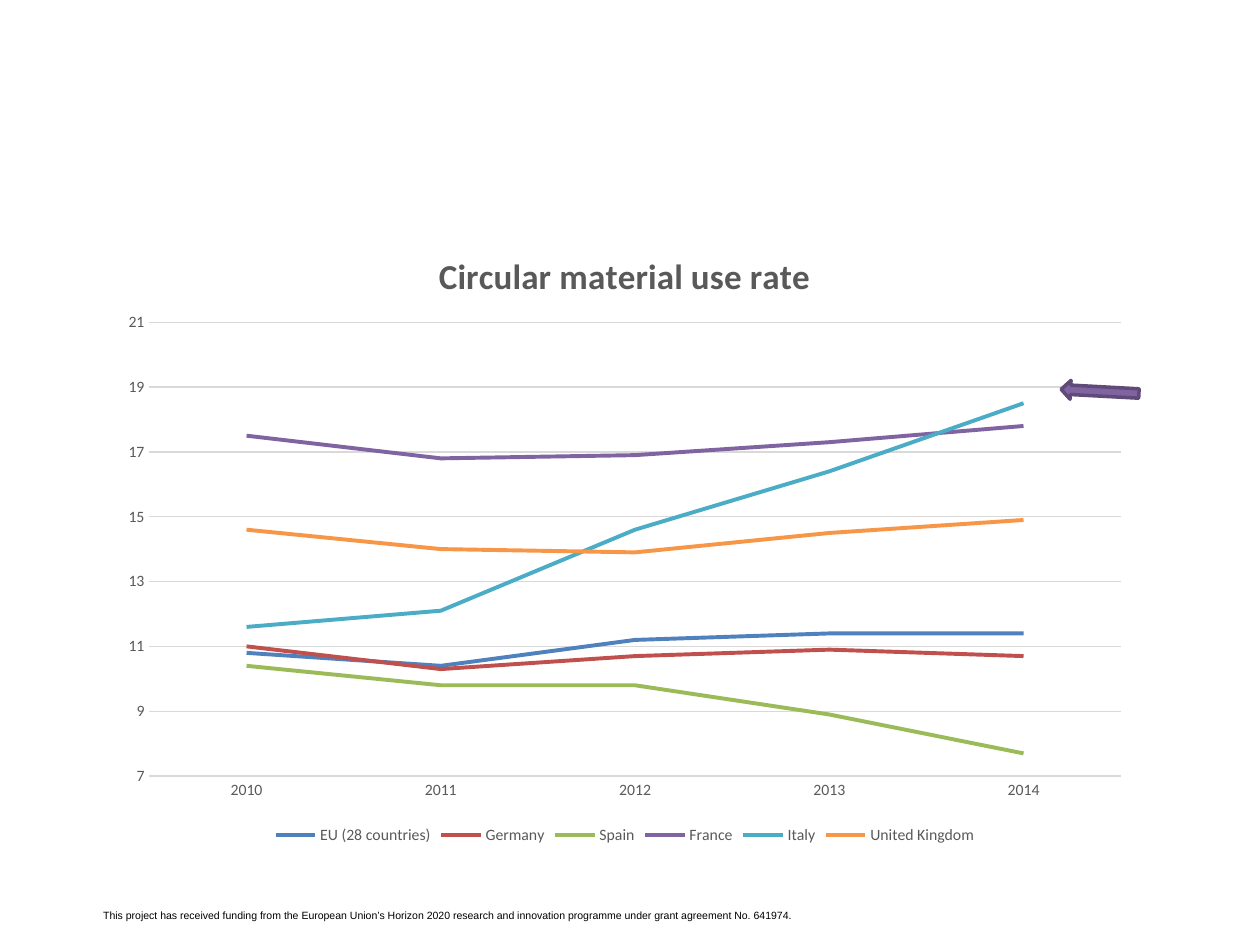
"""Build a slide with a line chart of circular material use rates."""
from pptx import Presentation
from pptx.chart.data import CategoryChartData
from pptx.dml.color import RGBColor
from pptx.enum.chart import XL_CHART_TYPE as ChartType
from pptx.enum.chart import XL_LEGEND_POSITION as LegendPosition
from pptx.enum.chart import XL_TICK_MARK as TickMark
from pptx.enum.shapes import MSO_SHAPE as Shape
from pptx.oxml import parse_xml
from pptx.oxml.ns import nsdecls
from pptx.util import Cm, Pt

COLORS = {
    "blue": "4F81BD", "red": "C0504D", "green": "9BBB59",
    "purple": "8064A2", "teal": "4BACC6", "orange": "F79646",
    "dark purple": "5F4A78", "gray": "595959", "grid": "D9D9D9", "black": "000000",
}
TITLE = "Circular material use rate"
FUNDING = (
    "This project has received funding from the European Union’s Horizon 2020 "
    "research and innovation programme under grant agreement No. 641974."
)
YEARS = ["2010", "2011", "2012", "2013", "2014"]
RATES = [
    ("EU (28 countries)", "blue", [10.8, 10.4, 11.2, 11.4, 11.4]),
    ("Germany", "red", [11, 10.3, 10.7, 10.9, 10.7]),
    ("Spain", "green", [10.4, 9.8, 9.8, 8.9, 7.7]),
    ("France", "purple", [17.5, 16.8, 16.9, 17.3, 17.8]),
    ("Italy", "teal", [11.6, 12.1, 14.6, 16.4, 18.5]),
    ("United Kingdom", "orange", [14.6, 14, 13.9, 14.5, 14.9]),
]
PLOT_AREA = {"x": 0.04, "y": 0.155, "w": 0.94, "h": 0.728}


def color(name):
    return RGBColor.from_string(COLORS[name])


def style_font(font, size, name="gray", family="Calibri", bold=False):
    font.name, font.size, font.bold = family, Pt(size), bold
    font.color.rgb = color(name)


def style_line(line, name, width):
    line.color.rgb = color(name)
    line.width = Pt(width)


def place_plot_area(chart):
    sizes = "".join(f'<c:{key} val="{value}"/>' for key, value in PLOT_AREA.items())
    layout = parse_xml(
        f'<c:layout {nsdecls("c")}><c:manualLayout><c:layoutTarget val="inner"/>'
        f'<c:xMode val="edge"/><c:yMode val="edge"/>{sizes}'
        "</c:manualLayout></c:layout>"
    )
    plot_area = chart._chartSpace.chart.plotArea
    for old_layout in plot_area.findall(layout.tag):
        plot_area.remove(old_layout)
    plot_area.insert(0, layout)


def add_rate_chart(slide):
    data = CategoryChartData()
    data.categories = YEARS
    for country, _, values in RATES:
        data.add_series(country, values)
    chart = slide.shapes.add_chart(
        ChartType.LINE, Cm(2.18), Cm(4.55), Cm(20.83), Cm(12.57), data
    ).chart
    style_font(chart.font, 10, "black")
    chart.has_title = True
    chart.chart_title.include_in_layout = False
    title = chart.chart_title.text_frame
    title.text = TITLE
    style_font(title.paragraphs[0].runs[0].font, 20, bold=True)

    chart.has_legend = True
    chart.legend.position = LegendPosition.BOTTOM
    chart.legend.include_in_layout = False
    style_font(chart.legend.font, 9)

    for axis in (chart.category_axis, chart.value_axis):
        axis.major_tick_mark = axis.minor_tick_mark = TickMark.NONE
        style_font(axis.tick_labels.font, 9)
    style_line(chart.category_axis.format.line, "grid", 0.75)
    values = chart.value_axis
    values.minimum_scale, values.maximum_scale, values.major_unit = 7, 21, 2
    values.format.line.fill.background()
    style_line(values.major_gridlines.format.line, "grid", 0.75)

    chart.plots[0].vary_by_categories = False
    for series, (_, name, _) in zip(chart.plots[0].series, RATES):
        series.smooth = False
        style_line(series.format.line, name, 2.25)
    place_plot_area(chart)


def add_arrow(slide):
    arrow = slide.shapes.add_shape(
        Shape.RIGHT_ARROW, Cm(21.39), Cm(7.7), Cm(1.57), Cm(0.38)
    )
    arrow.rotation = 183.1
    arrow.shadow.inherit = False
    arrow.fill.solid()
    arrow.fill.fore_color.rgb = color("purple")
    style_line(arrow.line, "dark purple", 2)


def add_funding_note(slide):
    text_frame = slide.shapes.add_textbox(
        Cm(1.83), Cm(18.21), Cm(16), Cm(1.02)
    ).text_frame
    text_frame.word_wrap = True
    text_frame.text = FUNDING
    style_font(text_frame.paragraphs[0].runs[0].font, 6, "black", "Arial")


def main():
    presentation = Presentation()
    presentation.slide_width, presentation.slide_height = Cm(25.4), Cm(19.05)
    slide = presentation.slides.add_slide(presentation.slide_layouts[6])
    add_funding_note(slide)
    add_rate_chart(slide)
    add_arrow(slide)
    presentation.save("out.pptx")


if __name__ == "__main__":
    main()
